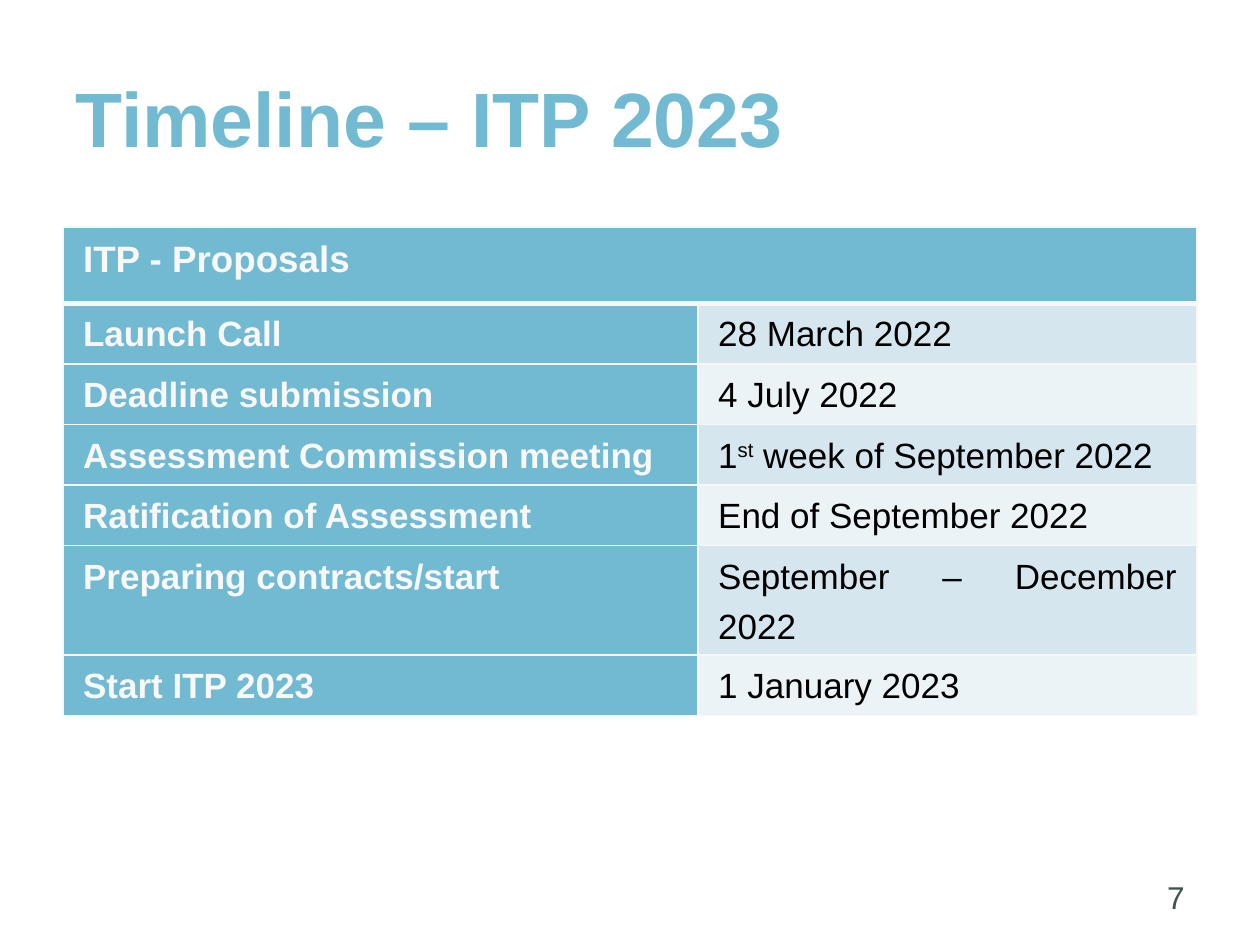
from lxml.etree import SubElement
from pptx import Presentation
from pptx.dml.color import RGBColor
from pptx.enum.text import MSO_ANCHOR, PP_ALIGN
from pptx.oxml.ns import qn
from pptx.util import Pt

TITLE = "Timeline – ITP 2023"
PAGE = "7"
HEADER = "ITP - Proposals"
ROWS = [
    ("Launch Call", ["28 March 2022"]),
    ("Deadline submission", ["4 July 2022"]),
    ("Assessment Commission meeting", ["1", "st", " week of September 2022"]),
    ("Ratification of Assessment", ["End of September 2022"]),
    ("Preparing contracts/start", ["September – December 2022"]),
    ("Start ITP 2023", ["1 January 2023"]),
]
BLUE, WHITE, BLACK, GREY = "72B9D2", "F8F8F8", "000000", "40534E"
BANDS = ["D5E6EE", "EBF3F7"]
COLS = [362.9, 285.1]
HEADER_H, ROW_H = 43.9, 34.6


def rgb(color):
    return RGBColor.from_string(color)


def style(p, size, color, bold=False):
    p.font.name = "Arial"
    p.font.size = Pt(size)
    p.font.bold = bold
    p.font.color.rgb = rgb(color)


def add_text(slide, box, text, size, color, bold=False):
    tf = slide.shapes.add_textbox(*map(Pt, box)).text_frame
    tf.word_wrap = True
    p = tf.paragraphs[0]
    p.add_run().text = text
    style(p, size, color, bold)
    return tf, p


def set_borders(cell, bottom):
    tcPr = cell._tc.get_or_add_tcPr()
    for side, width in (("L", 1), ("R", 1), ("T", 1), ("B", bottom)):
        ln = SubElement(tcPr, qn(f"a:ln{side}"), w=str(Pt(width)))
        fill = SubElement(ln, qn("a:solidFill"))
        SubElement(fill, qn("a:srgbClr"), val=WHITE)


def fill_cell(cell, parts, fill, size, color, bold, bottom=1):
    set_borders(cell, bottom)
    cell.fill.solid()
    cell.fill.fore_color.rgb = rgb(fill)
    cell.margin_left = cell.margin_right = Pt(11.5)
    cell.margin_top = cell.margin_bottom = 0
    p = cell.text_frame.paragraphs[0]
    p.alignment = PP_ALIGN.JUSTIFY
    p.line_spacing = 1.3
    p.space_after = Pt(6)
    style(p, size, color, bold)
    for part in parts:
        r = p.add_run()
        r.text = part
        if part == "st":
            r._r.get_or_add_rPr().set("baseline", "30000")


def add_timeline(slide):
    height = HEADER_H + ROW_H * len(ROWS)
    frame = slide.shapes.add_table(
        len(ROWS) + 1, 2, Pt(36), Pt(129.6), Pt(sum(COLS)), Pt(height))
    table = frame.table
    for col, width in zip(table.columns, COLS):
        col.width = Pt(width)
    for i, row in enumerate(table.rows):
        row.height = Pt(ROW_H if i else HEADER_H)
    table.cell(0, 0).merge(table.cell(0, 1))
    for j, parts in enumerate(([HEADER], [])):
        fill_cell(table.cell(0, j), parts, BLUE, 21, WHITE, True, bottom=3)
    for i, (step, date) in enumerate(ROWS):
        fill_cell(table.cell(i + 1, 0), [step], BLUE, 20, WHITE, True)
        fill_cell(table.cell(i + 1, 1), date, BANDS[i % 2], 20, BLACK, False)


def main():
    prs = Presentation()
    prs.slide_width, prs.slide_height = Pt(720), Pt(540)
    slide = prs.slides.add_slide(prs.slide_layouts[6])
    tf, p = add_text(slide, (36, 21.6, 648, 90), TITLE, 44, BLUE, True)
    tf.vertical_anchor = MSO_ANCHOR.MIDDLE
    add_timeline(slide)
    tf, p = add_text(slide, (516.2, 500.4, 167.8, 28.8), PAGE, 18, GREY)
    p.alignment = PP_ALIGN.RIGHT
    p.line_spacing = 0.9
    p.space_after = Pt(6)
    prs.save("out.pptx")


if __name__ == "__main__":
    main()
